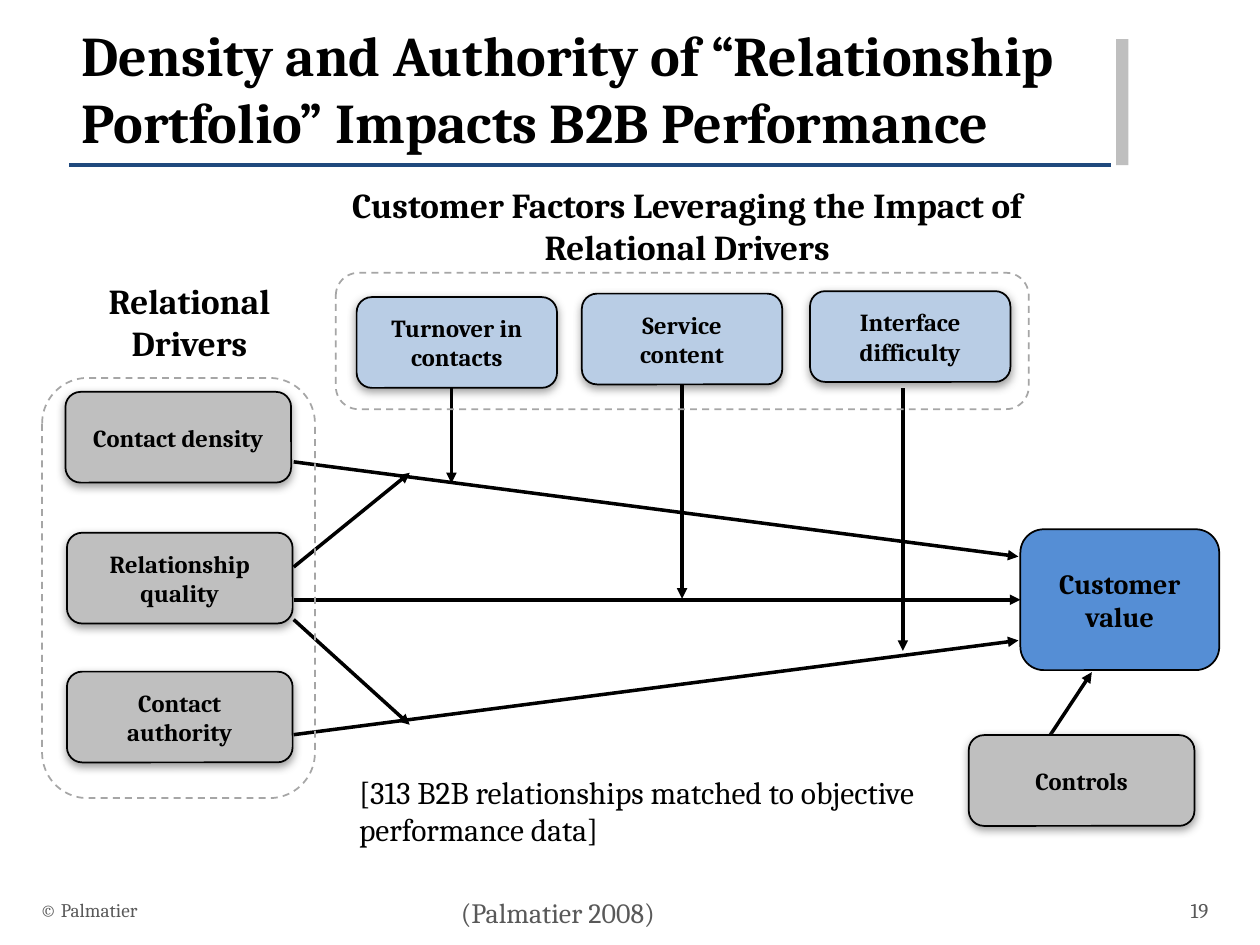
from lxml.etree import SubElement
from pptx import Presentation
from pptx.dml.color import RGBColor
from pptx.enum.dml import MSO_LINE
from pptx.enum.shapes import MSO_CONNECTOR, MSO_SHAPE
from pptx.enum.text import MSO_ANCHOR, PP_ALIGN
from pptx.oxml.ns import qn
from pptx.util import Cm, Pt

BLACK = RGBColor(0x00, 0x00, 0x00)
NAVY = RGBColor(0x1F, 0x49, 0x7D)
BLUE = RGBColor(0x55, 0x8E, 0xD5)
PALE_BLUE = RGBColor(0xB9, 0xCD, 0xE5)
GRAY = RGBColor(0xBF, 0xBF, 0xBF)
DASH_GRAY = RGBColor(0xA6, 0xA6, 0xA6)
TEXT_GRAY = RGBColor(0x59, 0x59, 0x59)

DRIVER_SIZE = (4.55, 1.83)
FACTOR_SIZE = (4.04, 1.83)


class Diagram:
    font = "Cambria"

    def __init__(self, slide):
        self.s = slide

    def label(self, sp, text, size, color, bold, align, anchor):
        tf = sp.text_frame
        tf.word_wrap = True
        tf.vertical_anchor = anchor
        tf.text = text
        p = tf.paragraphs[0]
        p.alignment = align
        font = p.runs[0].font
        font.name = self.font
        font.size = Pt(size)
        font.bold = bold
        font.color.rgb = color

    def text(self, at, text, size, color=BLACK, bold=False,
             align=PP_ALIGN.LEFT, anchor=MSO_ANCHOR.TOP):
        sp = self.s.shapes.add_textbox(*map(Cm, at))
        self.label(sp, text, size, color, bold, align, anchor)

    def shape(self, kind, at):
        sp = self.s.shapes.add_shape(kind, *map(Cm, at))
        sp.shadow.inherit = False
        return sp

    def bar(self, at, color):
        sp = self.shape(MSO_SHAPE.RECTANGLE, at)
        sp.fill.solid()
        sp.fill.fore_color.rgb = color
        sp.line.fill.background()

    def frame(self, at):
        sp = self.shape(MSO_SHAPE.ROUNDED_RECTANGLE, at)
        sp.fill.background()
        sp.line.color.rgb = DASH_GRAY
        sp.line.width = Pt(1)
        sp.line.dash_style = MSO_LINE.DASH

    def box(self, at, text, color, size=14, shadow=True):
        sp = self.shape(MSO_SHAPE.ROUNDED_RECTANGLE, at)
        sp.fill.solid()
        sp.fill.fore_color.rgb = color
        sp.line.color.rgb = BLACK
        sp.line.width = Pt(1)
        if shadow:
            self.drop_shadow(sp)
        self.label(sp, text, size, BLACK, True, PP_ALIGN.CENTER, MSO_ANCHOR.MIDDLE)
        return sp

    def drop_shadow(self, sp):
        effects = sp._element.spPr.find(qn("a:effectLst"))
        shadow = SubElement(effects, qn("a:outerShdw"), blurRad=str(Pt(5)),
                            dist=str(Pt(2)), dir="5400000", rotWithShape="0")
        color = SubElement(shadow, qn("a:srgbClr"), val="808080")
        SubElement(color, qn("a:alpha"), val="75000")

    def line(self, start, end, color=BLACK):
        cn = self.s.shapes.add_connector(MSO_CONNECTOR.STRAIGHT, *map(Cm, start + end))
        cn.line.color.rgb = color
        cn.line.width = Pt(2)
        SubElement(cn._element.spPr, qn("a:effectLst"))
        return cn

    def arrow(self, start, end):
        cn = self.line(start, end)
        SubElement(cn._element.spPr.find(qn("a:ln")), qn("a:tailEnd"), type="triangle")
        return cn


def main():
    prs = Presentation()
    prs.slide_width, prs.slide_height = Cm(25.4), Cm(19.05)
    d = Diagram(prs.slides.add_slide(prs.slide_layouts[6]))

    d.line((1.4, 3.33), (22.4, 3.33), NAVY)
    d.bar((22.5, 0.79, 0.25, 2.54), GRAY)
    d.text((1.4, 0.28, 20.98, 2.24),
           "Density and Authority of “Relationship Portfolio” Impacts B2B Performance",
           32, bold=True)

    for left, top, label in ((1.32, 7.9, "Contact density"),
                             (1.35, 10.74, "Relationship quality"),
                             (1.35, 13.54, "Contact authority")):
        d.box((left, top, *DRIVER_SIZE), label, GRAY)

    factors = [d.box((left, top, *FACTOR_SIZE), label, PALE_BLUE)
               for left, top, label in ((7.19, 5.99, "Turnover in contacts"),
                                        (11.73, 5.92, "Service content"),
                                        (16.33, 5.87, "Interface difficulty"))]
    value = d.box((20.57, 10.67, 4.01, 2.84), "Customer value", BLUE, 16, shadow=False)

    quality_to_value = d.arrow((5.92, 12.09), (20.57, 12.09))
    quality_to_value.end_connect(value, 1)
    service_effect = d.arrow((13.75, 7.75), (13.75, 12.07))
    service_effect.begin_connect(factors[1], 2)
    for start, end in (((5.92, 9.31), (20.53, 11.22)),
                       ((5.92, 14.81), (20.53, 12.91)),
                       ((5.92, 11.43), (8.26, 9.53)),
                       ((5.92, 12.49), (8.26, 14.61)),
                       ((9.1, 7.83), (9.1, 9.74)),
                       ((18.2, 7.83), (18.2, 13.12)),
                       ((21.17, 14.82), (22.01, 13.55))):
        d.arrow(start, end)
    d.box((19.53, 14.82, *DRIVER_SIZE), "Controls", GRAY)

    d.frame((0.85, 7.62, 5.5, 8.47))
    d.frame((6.77, 5.5, 13.97, 2.75))
    d.text((1.7, 5.5, 4.24, 1.96), "Relational Drivers", 20, bold=True,
           align=PP_ALIGN.CENTER)
    d.text((6.77, 3.58, 14.17, 1.96),
           "Customer Factors Leveraging the Impact of Relational Drivers",
           20, bold=True, align=PP_ALIGN.CENTER)

    d.text((6.99, 15.45, 12.7, 1.8),
           "[313 B2B relationships matched to objective performance data]", 18)
    d.text((9.04, 17.93, 5.41, 0.94), "(Palmatier 2008)", 16, TEXT_GRAY)
    d.text((0.56, 17.83, 17.02, 1.02), "© Palmatier", 11, TEXT_GRAY,
           anchor=MSO_ANCHOR.MIDDLE)
    d.text((23.06, 17.83, 1.55, 1.02), "19", 12, TEXT_GRAY,
           align=PP_ALIGN.RIGHT, anchor=MSO_ANCHOR.MIDDLE)

    prs.save("out.pptx")


if __name__ == "__main__":
    main()
